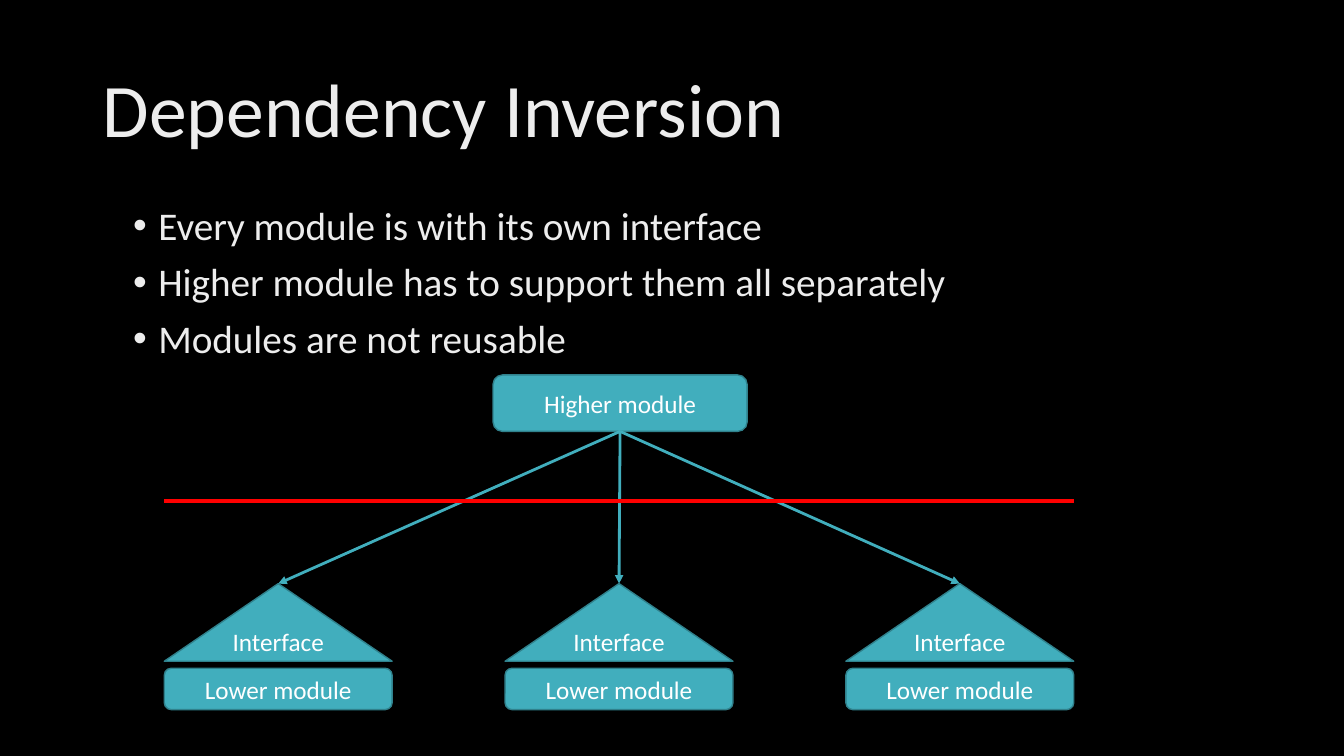
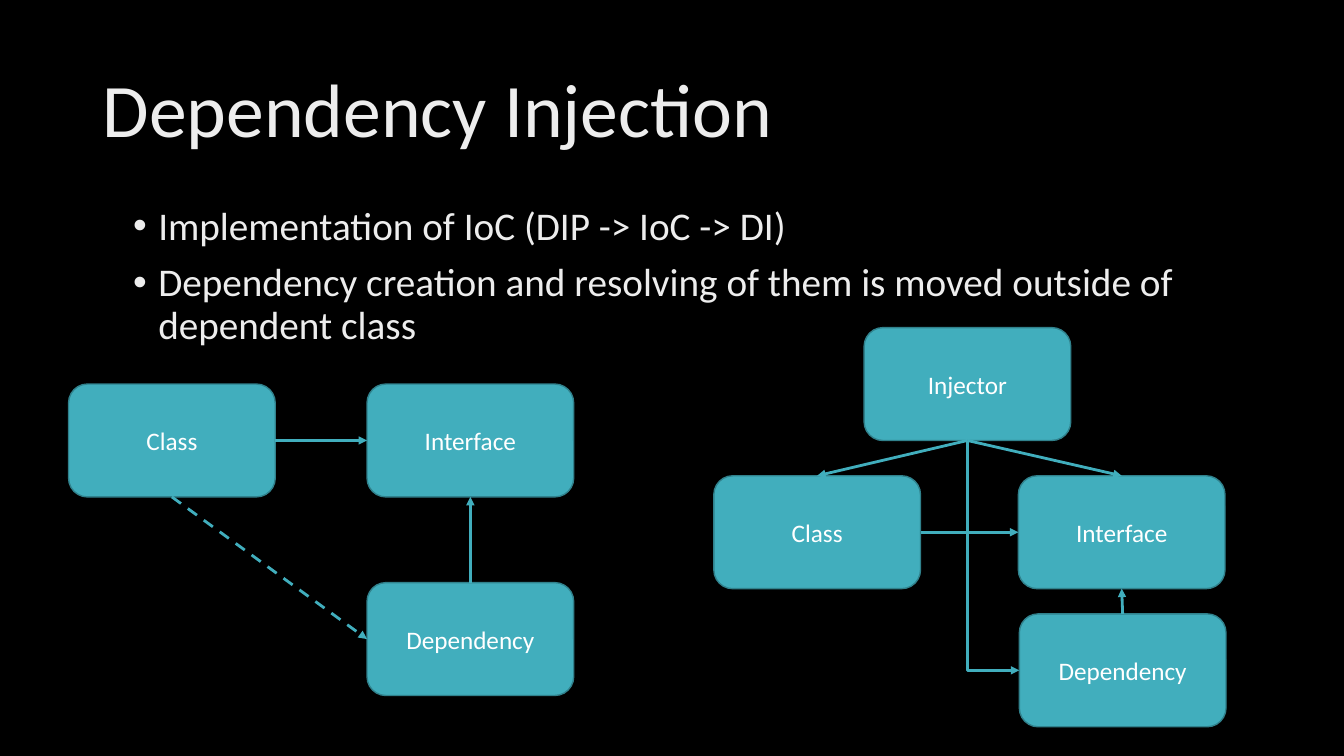
from lxml import etree
from pptx import Presentation
from pptx.dml.color import RGBColor
from pptx.enum.dml import MSO_LINE
from pptx.enum.shapes import MSO_CONNECTOR, MSO_SHAPE
from pptx.enum.text import MSO_ANCHOR, MSO_AUTO_SIZE, PP_ALIGN
from pptx.oxml.ns import qn
from pptx.util import Inches, Pt

ROUNDED, TRIANGLE = MSO_SHAPE.ROUNDED_RECTANGLE, MSO_SHAPE.ISOSCELES_TRIANGLE
STRAIGHT, ELBOW = MSO_CONNECTOR.STRAIGHT, MSO_CONNECTOR.ELBOW
DASH = MSO_LINE.DASH
MIDDLE, TOP_ANCHOR = MSO_ANCHOR.MIDDLE, MSO_ANCHOR.TOP
LEFT_ALIGN, CENTER = PP_ALIGN.LEFT, PP_ALIGN.CENTER
NO_AUTOFIT = MSO_AUTO_SIZE.NONE
TOP, LEFT, BOTTOM, RIGHT = range(4)

FONT = "Calibri"
BLACK, PALE, WHITE = "000000", "EDEDED", "FFFFFF"
TEAL, DARK_TEAL, RED = "41AEBD", "30818C", "FF0000"
TITLE_BOX = (0.92, 0.4, 11.5, 1.45)
BODY_BOX = (1.22, 2, 11.19, 4.76)
NODE_W, NODE_H = 2.05, 1.12


def color(hex_string):
    return RGBColor.from_string(hex_string)


def style_font(font, size, hex_string):
    font.name = FONT
    font.size = Pt(size)
    font.color.rgb = color(hex_string)


def place(shape, box):
    shape.left, shape.top, shape.width, shape.height = map(Inches, box)


def set_bullet(paragraph):
    properties = paragraph._p.get_or_add_pPr()
    properties.set("marL", str(Inches(0.25)))
    properties.set("indent", str(-Inches(0.25)))
    etree.SubElement(properties, qn("a:buFont")).set("typeface", "Arial")
    etree.SubElement(properties, qn("a:buChar")).set("char", "•")


def fill_placeholder(placeholder, box, lines, size, anchor, bulleted):
    place(placeholder, box)
    frame = placeholder.text_frame
    frame.text = "\n".join(lines)
    frame.auto_size = NO_AUTOFIT
    frame.vertical_anchor = anchor
    for index, paragraph in enumerate(frame.paragraphs):
        if bulleted:
            set_bullet(paragraph)
        paragraph.alignment = LEFT_ALIGN
        paragraph.line_spacing = 0.9
        paragraph.space_before = Pt(10 if index else 0)
        for run in paragraph.runs:
            style_font(run.font, size, PALE)


def add_topic_slide(prs, title, points):
    slide = prs.slides.add_slide(prs.slide_layouts[1])
    fill_placeholder(slide.shapes.title, TITLE_BOX, [title], 54, MIDDLE, False)
    fill_placeholder(slide.placeholders[1], BODY_BOX, points, 28, TOP_ANCHOR, True)
    return slide


def add_node(slide, label, left, top, width=NODE_W, height=NODE_H, outline=ROUNDED):
    node = slide.shapes.add_shape(outline, *map(Inches, (left, top, width, height)))
    node.shadow.inherit = False
    node.fill.solid()
    node.fill.fore_color.rgb = color(TEAL)
    node.line.color.rgb = color(DARK_TEAL)
    node.line.width = Pt(1)
    frame = node.text_frame
    frame.text = label
    frame.vertical_anchor = MIDDLE
    paragraph = frame.paragraphs[0]
    paragraph.alignment = CENTER
    style_font(paragraph.runs[0].font, 18, WHITE)
    return node


def add_line(slide, kind, ends, hex_string, width):
    line = slide.shapes.add_connector(kind, *map(Inches, ends))
    line.line.color.rgb = color(hex_string)
    line.line.width = Pt(width)
    etree.SubElement(line._element.spPr, qn("a:effectLst"))
    return line


def add_arrow(slide, source, source_side, target, target_side, kind=STRAIGHT):
    arrow = add_line(slide, kind, (0, 0, 1, 1), TEAL, 2)
    arrow.begin_connect(source, source_side)
    arrow.end_connect(target, target_side)
    etree.SubElement(arrow.line._get_or_add_ln(), qn("a:tailEnd")).set("type", "triangle")
    return arrow


def add_down_right_arrow(slide, source, target):
    arrow = add_arrow(slide, source, BOTTOM, target, LEFT, ELBOW)
    center_x = (arrow.begin_x + arrow.end_x) // 2
    center_y = (arrow.begin_y + arrow.end_y) // 2
    run, drop = arrow.width, arrow.height
    arrow.left, arrow.top = center_x - drop // 2, center_y - run // 2
    arrow.width, arrow.height = drop, run
    properties = arrow._element.spPr
    properties.find(qn("a:prstGeom")).set("prst", "bentConnector2")
    frame = properties.find(qn("a:xfrm"))
    frame.set("rot", str(270 * 60000))
    frame.set("flipH", "1")


def draw_module_tree(slide, left, top):
    module_w, pitch = 2.26, 3.38
    higher = add_node(slide, "Higher module", left + 3.26, top, 2.52, 0.56)
    for column in range(3):
        x = left + column * pitch
        add_node(slide, "Lower module", x, top + 2.91, module_w, 0.41)
        interface = add_node(slide, "Interface", x, top + 2.07, module_w, 0.77, TRIANGLE)
        add_arrow(slide, higher, BOTTOM, interface, TOP)
    barrier_y = top + 1.25
    add_line(slide, STRAIGHT, (left, barrier_y, left + 2 * pitch + module_w, barrier_y), RED, 3)


def draw_class_trio(slide, left, top, interface_dx, dependency_dx, dependency_dy):
    class_node = add_node(slide, "Class", left, top)
    dependency = add_node(slide, "Dependency", left + dependency_dx, top + dependency_dy)
    interface = add_node(slide, "Interface", left + interface_dx, top)
    add_arrow(slide, class_node, RIGHT, interface, LEFT)
    add_arrow(slide, dependency, TOP, interface, BOTTOM)
    return class_node, interface, dependency


def draw_direct_dependency(slide, left, top):
    class_node, _, dependency = draw_class_trio(slide, left, top, 2.96, 2.96, 1.97)
    add_arrow(slide, class_node, BOTTOM, dependency, LEFT).line.dash_style = DASH


def draw_injected_dependency(slide, left, top):
    injector = add_node(slide, "Injector", left + 1.49, top)
    class_node, interface, dependency = draw_class_trio(slide, left, top + 1.47, 3.02, 3.03, 1.37)
    for target in (class_node, interface):
        add_arrow(slide, injector, BOTTOM, target, TOP)
    add_down_right_arrow(slide, injector, dependency)


def main():
    prs = Presentation()
    prs.slide_width, prs.slide_height = Inches(13.33), Inches(7.5)
    backdrop = prs.slide_master.background.fill
    backdrop.solid()
    backdrop.fore_color.rgb = color(BLACK)

    inversion = add_topic_slide(prs, "Dependency Inversion", [
        "Every module is with its own interface",
        "Higher module has to support them all separately",
        "Modules are not reusable",
    ])
    draw_module_tree(inversion, 1.63, 3.72)

    injection = add_topic_slide(prs, "Dependency Injection", [
        "Implementation of IoC (DIP -> IoC -> DI)",
        "Dependency creation and resolving of them is moved outside of dependent class",
    ])
    draw_direct_dependency(injection, 0.68, 3.81)
    draw_injected_dependency(injection, 7.08, 3.25)

    prs.save("out.pptx")


if __name__ == "__main__":
    main()
